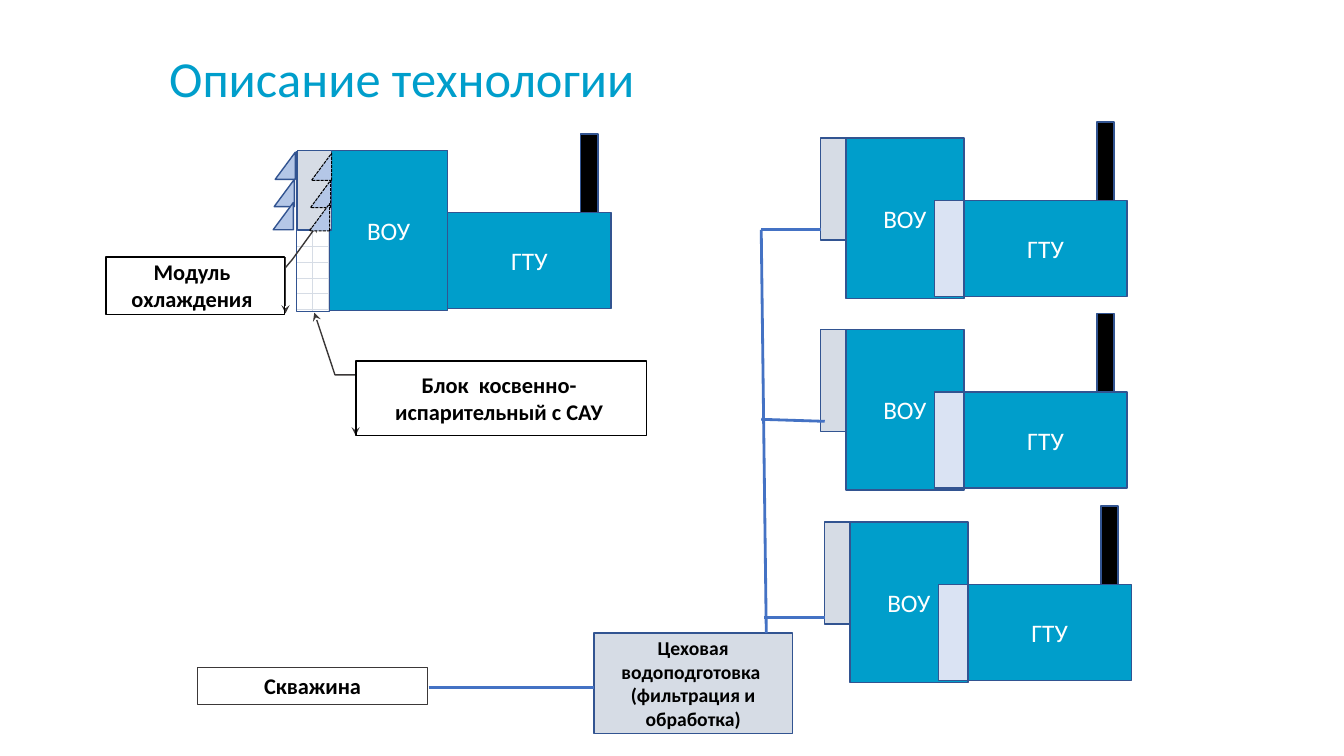
from dataclasses import dataclass
from typing import Optional

import lxml.etree
import pptx
import pptx.dml.color
import pptx.enum.dml
import pptx.enum.shapes
import pptx.enum.text
import pptx.oxml.ns
import pptx.util

Inches = pptx.util.Inches
Kind = pptx.enum.shapes.MSO_SHAPE
Anchor = pptx.enum.text.MSO_ANCHOR


@dataclass(frozen=True)
class Theme:
    font: str = "Calibri"
    blue: str = "009ECB"
    edge: str = "325491"
    pipe: str = "4472C4"
    grey: str = "D6DCE5"
    pale: str = "DAE3F3"
    vane: str = "B4C7E7"
    dark: str = "3B3838"
    black: str = "000000"
    white: str = "FFFFFF"
    title: float = 36
    unit: float = 18
    label: float = 16
    small: float = 14


THEME = Theme()


@dataclass(frozen=True)
class Box:
    left: float
    top: float
    width: float
    height: float
    fill: Optional[str] = None
    line: str = THEME.edge
    text: str = ""
    size: float = THEME.label
    ink: str = THEME.black
    bold: bool = True
    kind: Kind = Kind.RECTANGLE
    flip: bool = False
    dash: bool = False
    bends: tuple[float, ...] = ()


@dataclass(frozen=True)
class Rig:
    left: float
    top: float
    inlet: bool = True


@dataclass(frozen=True)
class Pipe:
    x1: float
    y1: float
    x2: float
    y2: float


RIGS = [Rig(3.02, 1.33, False), Rig(8.14, 1.21), Rig(8.14, 3.11), Rig(8.18, 5.02)]

PIPES = [
    Pipe(4.25, 6.82, 5.89, 6.82),
    Pipe(7.6, 6.28, 7.55, 2.28),
    Pipe(7.58, 6.13, 8.18, 6.13),
    Pipe(7.55, 4.16, 8.18, 4.18),
    Pipe(7.55, 2.28, 8.14, 2.28),
]

NOTES = [
    Box(3.73, 3.58, 2.44, 0.74, THEME.white, THEME.dark,
        "Блок  косвенно-испарительный с САУ", kind=Kind.LINE_CALLOUT_2_ACCENT_BAR,
        bends=(0.188, -0.083, 0.188, -0.167, -0.646, -0.251)),
    Box(1.11, 2.55, 1.59, 0.56, THEME.white, THEME.dark,
        "Модуль охлаждения", kind=Kind.LINE_CALLOUT_2_ACCENT_BAR, flip=True,
        bends=(0.188, -0.083, 0.043, -0.126, -0.581, -0.285)),
]

PLANT = Box(5.89, 6.28, 1.97, 1, THEME.grey,
            text="Цеховая водоподготовка  (фильтрация и обработка)", size=THEME.small)
WELL = Box(1.96, 6.62, 2.28, 0.37, line=THEME.dark, text="Скважина")
GRID = Box(2.94, 1.5, 0.33, 1.59)
COOLER = Box(2.95, 1.49, 0.34, 0.79, THEME.grey)
FRAMES = [
    Box(1.05, 2.55, 1.77, 0.57, line=THEME.black),
    Box(3.53, 3.58, 2.88, 0.74, line=THEME.black),
]


def tint(code: str) -> pptx.dml.color.RGBColor:
    return pptx.dml.color.RGBColor.from_string(code)


def write(frame, text: str, size: float, ink: str, bold: bool) -> None:
    frame.word_wrap = True
    frame.vertical_anchor = Anchor.MIDDLE
    run = frame.paragraphs[0].add_run()
    run.text = text
    run.font.name = THEME.font
    run.font.size = pptx.util.Pt(size)
    run.font.bold = bold
    run.font.color.rgb = tint(ink)


def draw_box(slide, box: Box):
    shape = slide.shapes.add_shape(box.kind, Inches(box.left), Inches(box.top),
                                   Inches(box.width), Inches(box.height))
    shape.shadow.inherit = False
    if box.fill:
        shape.fill.solid()
        shape.fill.fore_color.rgb = tint(box.fill)
    else:
        shape.fill.background()
    shape.line.color.rgb = tint(box.line)
    shape.line.width = pptx.util.Pt(0.75 if box.dash else 1)
    if box.dash:
        shape.line.dash_style = pptx.enum.dml.MSO_LINE.SQUARE_DOT
    if box.flip:
        shape.element.spPr.find(pptx.oxml.ns.qn("a:xfrm")).set("flipH", "1")
    for index, bend in enumerate(box.bends):
        shape.adjustments[index] = bend
    if box.bends:
        line = shape.element.spPr.find(pptx.oxml.ns.qn("a:ln"))
        lxml.etree.SubElement(line, pptx.oxml.ns.qn("a:tailEnd"), type="stealth")
    if box.text:
        write(shape.text_frame, box.text, box.size, box.ink, box.bold)
        shape.text_frame.paragraphs[0].alignment = pptx.enum.text.PP_ALIGN.CENTER
    return shape


def draw_rig(slide, rig: Rig) -> None:
    x, y = rig.left, rig.top
    look = dict(size=THEME.unit, ink=THEME.white, bold=False)
    if rig.inlet:
        draw_box(slide, Box(x, y + 0.16, 0.28, 1.01, THEME.grey))
    draw_box(slide, Box(x + 0.25, y + 0.16, 1.17, 1.59, THEME.blue, text="ВОУ", **look))
    if rig.inlet:
        draw_box(slide, Box(x + 1.13, y + 0.78, 0.29, 0.95, THEME.pale))
    draw_box(slide, Box(x + 1.42, y + 0.78, 1.62, 0.95, THEME.blue, text="ГТУ", **look))
    draw_box(slide, Box(x + 2.74, y, 0.17, 0.78, THEME.black))


def draw_pipe(slide, pipe: Pipe) -> None:
    line = slide.shapes.add_connector(
        pptx.enum.shapes.MSO_CONNECTOR.STRAIGHT,
        Inches(pipe.x1), Inches(pipe.y1), Inches(pipe.x2), Inches(pipe.y2))
    line.line.color.rgb = tint(THEME.pipe)
    line.line.width = pptx.util.Pt(2)
    lxml.etree.SubElement(line.element.spPr, pptx.oxml.ns.qn("a:effectLst"))


def draw_vanes(slide, left: float, top: float, line: str, dash: bool) -> None:
    for row, drop in enumerate((0, 0.27, 0.5)):
        draw_box(slide, Box(left - 0.01 * row, top + drop, 0.2, 0.27, THEME.vane, line,
                            kind=Kind.RIGHT_TRIANGLE, flip=True, dash=dash))


def draw_title(slide) -> None:
    title = slide.shapes.add_textbox(Inches(1.58), Inches(0.4), Inches(11.03), Inches(0.81))
    write(title.text_frame, "Описание технологии", THEME.title, THEME.blue, False)
    title.text_frame.paragraphs[0].line_spacing = 0.9


def main() -> None:
    deck = pptx.Presentation()
    deck.slide_width, deck.slide_height = Inches(13.33), Inches(7.5)
    slide = deck.slides.add_slide(deck.slide_layouts[6])
    draw_title(slide)
    for rig in RIGS:
        draw_rig(slide, rig)
    draw_box(slide, NOTES[0])
    draw_box(slide, PLANT)
    for pipe in PIPES:
        draw_pipe(slide, pipe)
    grid = draw_box(slide, GRID)
    grid.fill.patterned()
    grid.fill.pattern = pptx.enum.dml.MSO_PATTERN.DOTTED_GRID
    grid.fill.fore_color.rgb = tint(THEME.grey)
    grid.fill.back_color.rgb = tint(THEME.white)
    draw_box(slide, COOLER)
    draw_box(slide, NOTES[1])
    draw_vanes(slide, 2.73, 1.51, THEME.edge, False)
    draw_box(slide, WELL)
    draw_vanes(slide, 3.09, 1.52, THEME.black, True)
    for frame in FRAMES:
        draw_box(slide, frame)
    deck.save("out.pptx")


if __name__ == "__main__":
    main()
